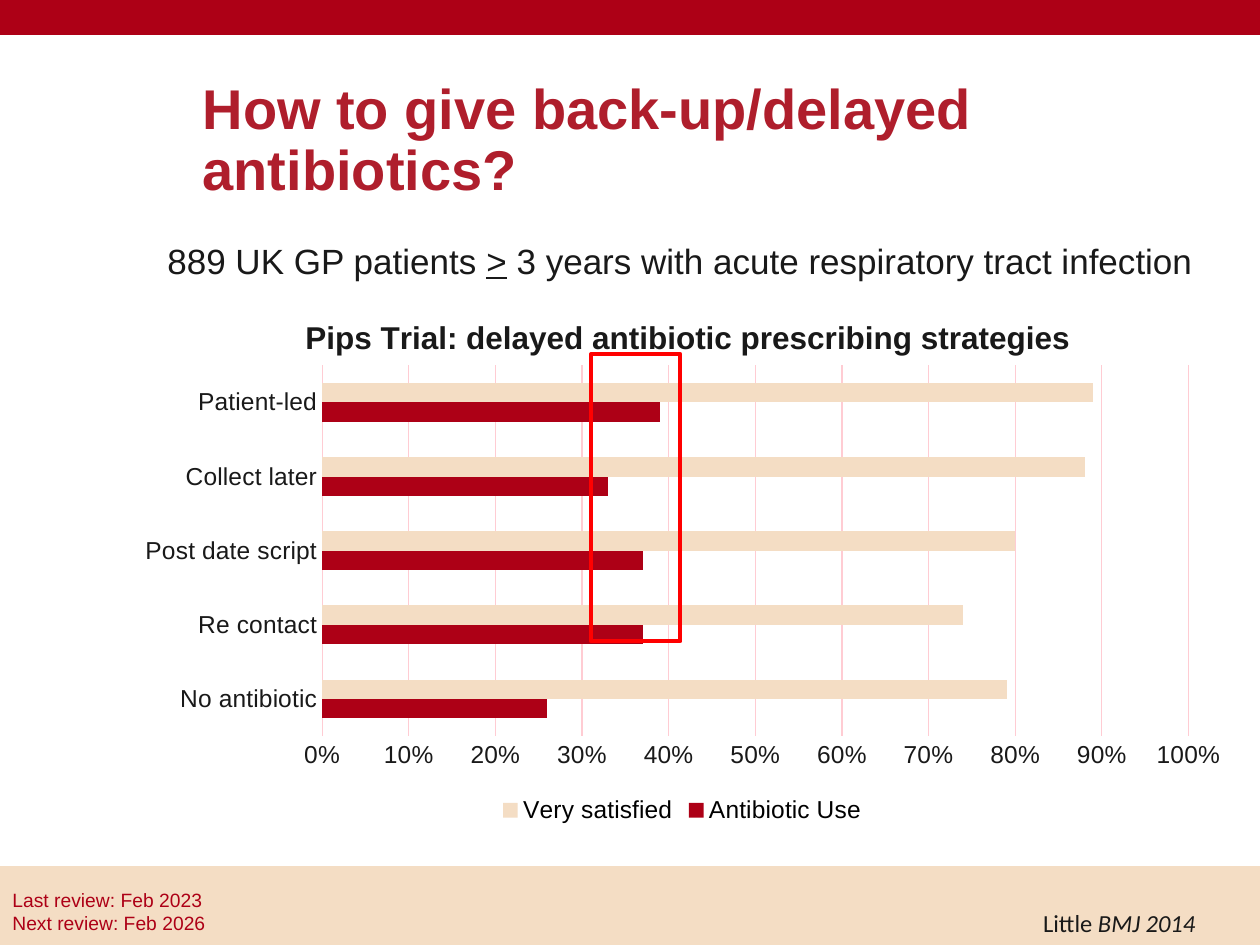
from lxml import etree
from pptx import Presentation
from pptx.chart.data import CategoryChartData
from pptx.dml.color import RGBColor
from pptx.enum.chart import XL_CHART_TYPE, XL_LEGEND_POSITION, XL_TICK_MARK
from pptx.enum.shapes import MSO_SHAPE
from pptx.enum.text import MSO_ANCHOR, PP_ALIGN
from pptx.oxml.ns import qn
from pptx.util import Inches, Pt

RECTANGLE = MSO_SHAPE.RECTANGLE
BAR_CLUSTERED = XL_CHART_TYPE.BAR_CLUSTERED
LEGEND_BOTTOM = XL_LEGEND_POSITION.BOTTOM
NO_TICK = XL_TICK_MARK.NONE
TOP, MIDDLE = MSO_ANCHOR.TOP, MSO_ANCHOR.MIDDLE
LEFT = PP_ALIGN.LEFT

SAND = RGBColor(0xF4, 0xDD, 0xC4)
CRIMSON = RGBColor(0xAD, 0x00, 0x16)
TITLE_RED = RGBColor(0xAF, 0x1E, 0x2C)
INK = RGBColor(0x19, 0x19, 0x19)
BLACK = RGBColor(0, 0, 0)
PINK = RGBColor(0xFF, 0xCC, 0xD3)
RED = RGBColor(0xFF, 0, 0)

TITLE = [[("How to give back-up/delayed antibiotics?", {"bold": True})]]
POPULATION = [[
    ("889 UK GP patients ", {}),
    (">", {"underline": True}),
    (" 3 years with acute respiratory tract infection", {}),
]]
REVIEW = [[("Last review: Feb 2023", {})], [("Next review: Feb 2026", {})]]
CITATION = [[("Little ", {}), ("BMJ 2014", {"italic": True})]]

CHART_TITLE = "Pips Trial: delayed antibiotic prescribing strategies"
CATEGORIES = ["No antibiotic", "Re contact", "Post date script", "Collect later", "Patient-led"]
SERIES = [
    ("Antibiotic Use", CRIMSON, [0.26, 0.37, 0.37, 0.33, 0.39]),
    ("Very satisfied", SAND, [0.79, 0.74, 0.80, 0.88, 0.89]),
]


def add_rectangle(slide, box, fill=None, line=None, line_width=1):
    shape = slide.shapes.add_shape(RECTANGLE, *map(Inches, box))
    shape.shadow.inherit = False
    if fill is None:
        shape.fill.background()
    else:
        shape.fill.solid()
        shape.fill.fore_color.rgb = fill
    if line is None:
        shape.line.fill.background()
    else:
        shape.line.color.rgb = line
        shape.line.width = Pt(line_width)
    return shape


def write_text(shape, paragraphs, size, color, font="Arial", anchor=TOP, spacing=None):
    frame = shape.text_frame
    frame.word_wrap = True
    frame.vertical_anchor = anchor
    for index, runs in enumerate(paragraphs):
        paragraph = frame.add_paragraph() if index else frame.paragraphs[0]
        paragraph.alignment = LEFT
        if spacing:
            paragraph.line_spacing = spacing
        for text, styles in runs:
            run = paragraph.add_run()
            run.text = text
            style_font(run.font, size, color, font)
            for name, value in styles.items():
                setattr(run.font, name, value)


def add_text(slide, box, *args, **options):
    write_text(slide.shapes.add_textbox(*map(Inches, box)), *args, **options)


def style_font(font, size, color, name="Arial"):
    font.size = Pt(size)
    font.color.rgb = color
    font.name = name


def set_layout(element, values, inner=False):
    layout = element.find(qn("c:layout"))
    if layout is None:
        layout = etree.Element(qn("c:layout"))
        text = element.find(qn("c:tx"))
        if text is None:
            element.insert(0, layout)
        else:
            text.addnext(layout)
    for child in list(layout):
        layout.remove(child)
    manual = etree.SubElement(layout, qn("c:manualLayout"))
    settings = [("layoutTarget", "inner")] if inner else []
    settings += [("xMode", "edge"), ("yMode", "edge")]
    settings += zip("xywh", values)
    for tag, value in settings:
        etree.SubElement(manual, qn("c:" + tag)).set("val", str(value))


def add_trial_chart(slide, box):
    data = CategoryChartData(number_format="0%")
    data.categories = CATEGORIES
    for name, _, values in SERIES:
        data.add_series(name, values)
    chart = slide.shapes.add_chart(BAR_CLUSTERED, *map(Inches, box), data).chart
    style_font(chart.font, 10, CRIMSON, "Calibri")

    chart.has_title = True
    title = chart.chart_title
    title.text_frame.text = CHART_TITLE
    title_font = title.text_frame.paragraphs[0].runs[0].font
    style_font(title_font, 18, INK)
    title_font.bold = True
    title.include_in_layout = False

    chart.has_legend = True
    chart.legend.position = LEGEND_BOTTOM
    chart.legend.include_in_layout = False
    style_font(chart.legend.font, 14, BLACK)

    for axis in (chart.category_axis, chart.value_axis):
        axis.major_tick_mark = NO_TICK
        axis.minor_tick_mark = NO_TICK
        style_font(axis.tick_labels.font, 14, INK)
    category_line = chart.category_axis.format.line
    category_line.color.rgb = PINK
    category_line.width = Pt(0.75)

    value_axis = chart.value_axis
    value_axis.minimum_scale, value_axis.maximum_scale = 0, 1
    value_axis.major_unit = 0.1
    value_axis.format.line.fill.background()
    value_axis.has_major_gridlines = True
    value_axis.major_gridlines.format.line.color.rgb = PINK
    value_axis.major_gridlines.format.line.width = Pt(0.75)
    value_axis.tick_labels.number_format = "0%"
    value_axis.tick_labels.number_format_is_linked = False

    plot = chart.plots[0]
    plot.vary_by_categories = False
    plot.gap_width = 182
    plot.overlap = 0
    for series, (_, color, _) in zip(plot.series, SERIES):
        series.format.fill.solid()
        series.format.fill.fore_color.rgb = color

    chart_element = chart.element.find(qn("c:chart"))
    set_layout(chart_element.find(qn("c:title")), (0.16, 0.05))
    set_layout(chart_element.find(qn("c:plotArea")), (0.18, 0.15, 0.77, 0.68), inner=True)


def main():
    presentation = Presentation()
    presentation.slide_width = Inches(10)
    presentation.slide_height = Inches(7.5)
    slide = presentation.slides.add_slide(presentation.slide_layouts[6])

    add_rectangle(slide, (0, 6.88, 10, 0.62), SAND, SAND)
    add_rectangle(slide, (0, -0.01, 10, 0.28), CRIMSON, CRIMSON)
    add_text(slide, (1.51, 0.4, 8.38, 1.45), TITLE, 32, TITLE_RED, anchor=MIDDLE, spacing=0.9)
    add_text(slide, (1.23, 1.85, 8.77, 0.44), POPULATION, 20, INK)
    add_trial_chart(slide, (0.95, 2.25, 8.93, 4.33))
    add_rectangle(slide, (4.69, 2.81, 0.71, 2.28), line=RED, line_width=2.25)
    review = add_rectangle(slide, (0, 7, 3.34, 0.47), SAND)
    write_text(review, REVIEW, 11, CRIMSON, anchor=MIDDLE)
    add_text(slide, (8.18, 7.16, 1.7, 0.34), CITATION, 14, INK, font="Calibri")

    presentation.save("out.pptx")


if __name__ == "__main__":
    main()
